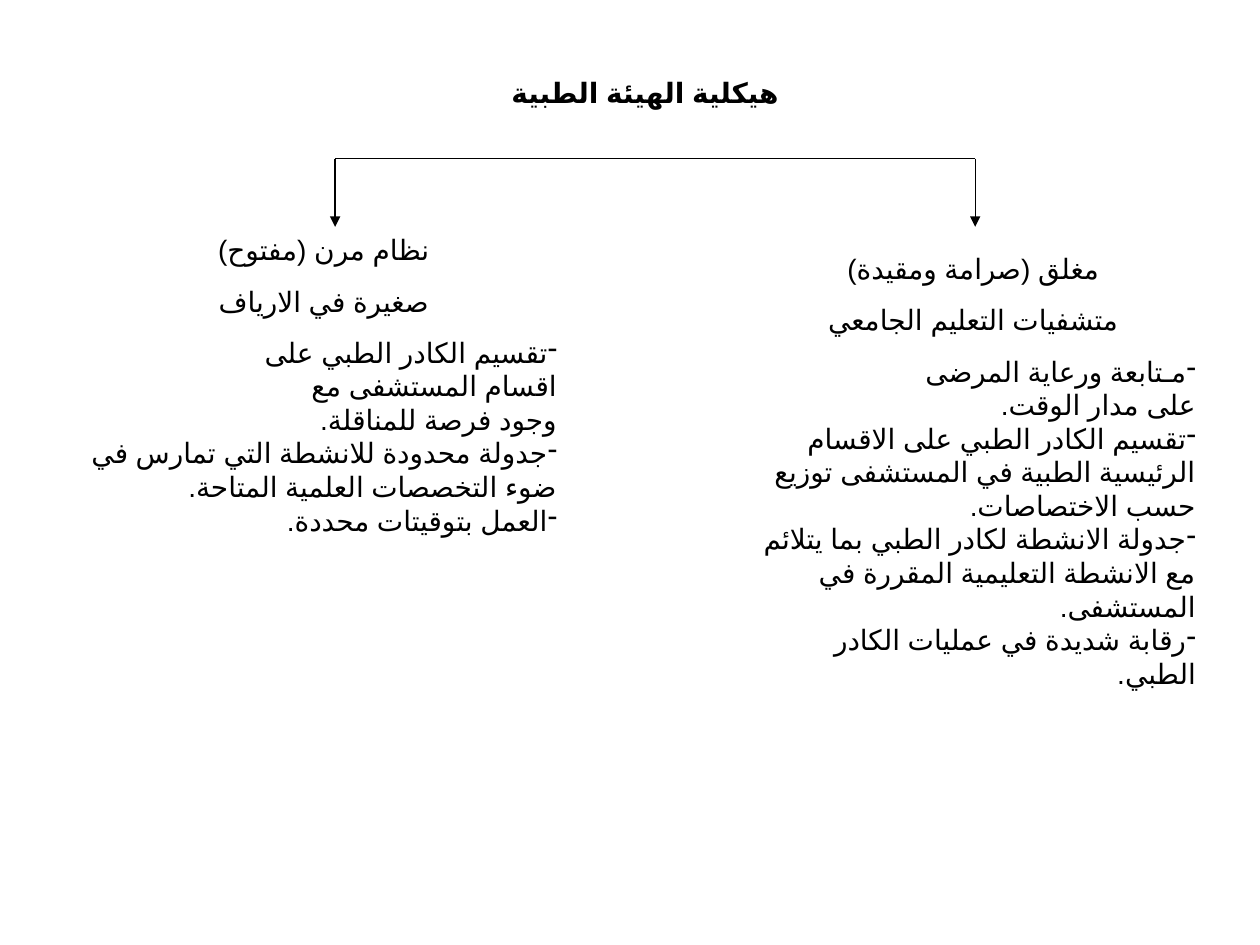
from lxml.etree import SubElement
from pptx import Presentation
from pptx.dml.color import RGBColor
from pptx.enum.lang import MSO_LANGUAGE_ID
from pptx.enum.shapes import MSO_CONNECTOR, MSO_SHAPE
from pptx.enum.text import MSO_ANCHOR, PP_ALIGN
from pptx.oxml.ns import qn
from pptx.util import Inches, Pt

COLORS = {"paper": "FFFFFF", "ink": "000000"}
FONT = "Arial"

# Each column: box, centred headings, dashed points
COLUMNS = [
    ((5.86, 1.95, 3.73, 4.32),
     ["مغلق (صرامة ومقيدة)", "متشفيات التعليم الجامعي"],
     ["مـتابعة ورعاية المرضى\nعلى مدار الوقت.",
      "تقسيم الكادر الطبي على الاقسام الرئيسية الطبية في المستشفى توزيع حسب الاختصاصات.",
      "جدولة الانشطة لكادر الطبي بما يتلائم مع الانشطة التعليمية المقررة في المستشفى.",
      "رقابة شديدة في عمليات الكادر الطبي."]),
    ((0.62, 1.8, 3.9, 5.38),
     ["نظام مرن (مفتوح)", "صغيرة في الارياف"],
     ["تقسيم الكادر الطبي على\nاقسام المستشفى مع\nوجود فرصة للمناقلة.",
      "جدولة محدودة للانشطة التي تمارس في ضوء التخصصات العلمية المتاحة.",
      "العمل بتوقيتات محددة."]),
]


def rgb(name):
    return RGBColor.from_string(COLORS[name])


def add_box(slide, left, top, width, height):
    sp = slide.shapes.add_shape(MSO_SHAPE.RECTANGLE, Inches(left), Inches(top),
                                Inches(width), Inches(height))
    sp.shadow.inherit = False
    sp.fill.solid()
    sp.fill.fore_color.rgb = rgb("paper")
    sp.line.color.rgb = rgb("paper")
    sp.line.width = Pt(0.75)
    tf = sp.text_frame
    tf.word_wrap = True
    tf.vertical_anchor = MSO_ANCHOR.TOP
    return tf


def add_text(tf, text, align=PP_ALIGN.CENTER, after=10, bold=False, bullet=None):
    """Add a right-to-left paragraph, using the empty first one if it is free."""
    first = tf.paragraphs[0]
    p = tf.add_paragraph() if first.runs else first
    p.alignment = align
    p.space_after = Pt(after)
    pPr = p._p.get_or_add_pPr()
    pPr.set("rtl", "1")
    if bullet:
        SubElement(pPr, qn("a:buChar"), char=bullet)
    for i, line in enumerate(text.split("\n")):
        if i:
            p.add_line_break()
        r = p.add_run()
        r.text = line
        r.font.name = FONT
        r.font.size = Pt(16)
        r.font.bold = bold
        r.font.color.rgb = rgb("ink")
        r.font.language_id = MSO_LANGUAGE_ID.ARABIC_IRAQ
        SubElement(r._r.get_or_add_rPr(), qn("a:cs"), typeface=FONT)


def add_line(slide, x1, y1, x2, y2, arrow=False):
    cn = slide.shapes.add_connector(MSO_CONNECTOR.STRAIGHT, Inches(x1), Inches(y1),
                                    Inches(x2), Inches(y2))
    cn.line.color.rgb = rgb("ink")
    cn.line.width = Pt(0.75)
    if arrow:
        SubElement(cn.line._get_or_add_ln(), qn("a:tailEnd"), type="triangle")
    SubElement(cn._element.spPr, qn("a:effectLst"))


def main():
    prs = Presentation()
    prs.slide_width, prs.slide_height = Inches(10), Inches(7.5)
    slide = prs.slides.add_slide(prs.slide_layouts[6])

    # Title
    add_text(add_box(slide, 3.68, 0.55, 2.88, 0.54), "هيكلية الهيئة الطبية", bold=True)

    # The two systems
    for box, headings, points in COLUMNS:
        tf = add_box(slide, *box)
        for heading in headings:
            add_text(tf, heading)
        for point in points:
            add_text(tf, point, align=PP_ALIGN.RIGHT, after=0, bullet="-")

    # Branch from the title to both columns
    left, right, top, bottom = 2.66, 7.74, 1.26, 1.8
    add_line(slide, left, top, right, top)
    for x in (right, left):
        add_line(slide, x, top, x, bottom, arrow=True)

    prs.save("out.pptx")


if __name__ == "__main__":
    main()
